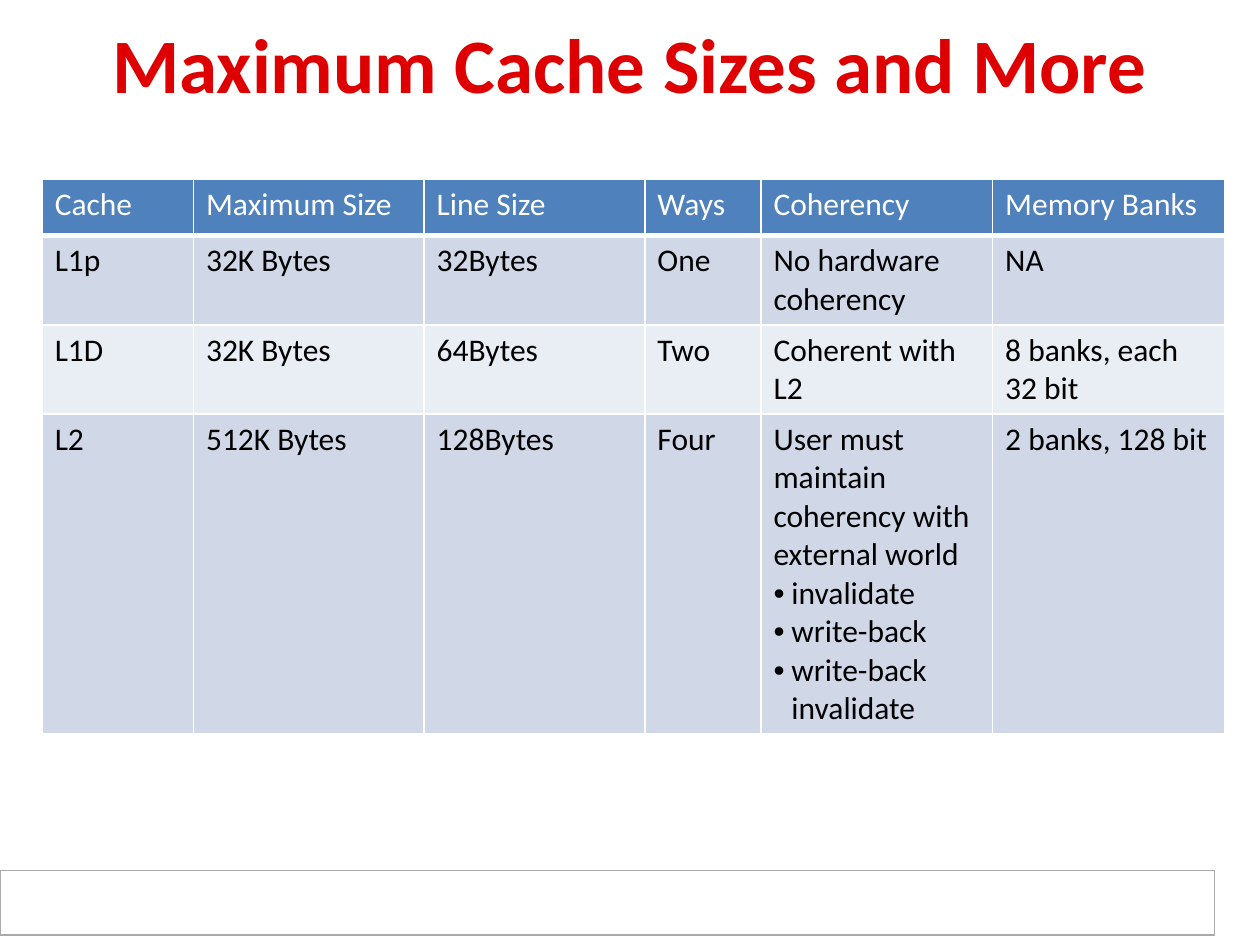
from lxml import etree
from pptx import Presentation, util as u
from pptx.dml.color import RGBColor
from pptx.enum import shapes, text
from pptx.oxml.ns import qn

HEADING = "Maximum Cache Sizes and More"
COLUMNS = [("Cache", 3.05), ("Maximum Size", 4.65), ("Line Size", 4.45),
           ("Ways", 2.34), ("Coherency", 4.67), ("Memory Banks", 4.67)]
CACHES = [
    ["L1p", "32K Bytes", "32Bytes", "One", "No hardware coherency", "NA"],
    ["L1D", "32K Bytes", "64Bytes", "Two", "Coherent with L2", "8 banks, each 32 bit"],
    ["L2", "512K Bytes", "128Bytes", "Four",
     ["User must maintain coherency with external world",
      "• invalidate", "• write-back", "• write-back\vinvalidate"],
     "2 banks, 128 bit"],
]
ROW_HEIGHTS = [1.14, 1.8, 1.8, 6.45]
COLORS = {"title": "DE0000", "header": "4F81BD", "odd": "D0D8E8", "even": "E9EDF4",
          "white": "FFFFFF", "black": "000000", "footer_line": "AAAAAA"}
BULLET_INDENT = u.Cm(0.36)


def rgb(name):
    return RGBColor.from_string(COLORS[name])


def write(frame, lines, size=18, color="black", bold=False, align=text.PP_ALIGN.LEFT):
    for i, line in enumerate([lines] if isinstance(lines, str) else lines):
        paragraph = frame.paragraphs[0] if i == 0 else frame.add_paragraph()
        paragraph.text = line.removeprefix("• ")
        if line.startswith("• "):
            props = paragraph._p.get_or_add_pPr()
            props.set("marL", str(BULLET_INDENT))
            props.set("indent", str(-BULLET_INDENT))
            etree.SubElement(props, qn("a:buFont"), typeface="Arial")
            etree.SubElement(props, qn("a:buChar"), char="•")
        paragraph.alignment = align
        for run in paragraph.runs:
            run.font.name, run.font.size, run.font.bold = "Calibri", u.Pt(size), bold
            run.font.color.rgb = rgb(color)


def add_borders(cell, bottom):
    props = cell._tc.get_or_add_tcPr()
    for side, width in (("L", 1), ("R", 1), ("T", 1), ("B", bottom)):
        line = etree.SubElement(props, qn(f"a:ln{side}"), w=str(u.Pt(width)))
        fill = etree.SubElement(line, qn("a:solidFill"))
        etree.SubElement(fill, qn("a:srgbClr"), val=COLORS["white"])


def add_footer(slide):
    footer = slide.shapes.add_shape(shapes.MSO_SHAPE.RECTANGLE,
                                    0, u.Cm(17.55), u.Cm(24.49), u.Cm(1.3))
    footer.shadow.inherit = False
    footer.fill.solid()
    footer.fill.fore_color.rgb = rgb("white")
    footer.line.color.rgb = rgb("footer_line")
    footer.line.width = u.Pt(0.75)


def add_title(slide):
    title = slide.shapes.add_textbox(u.Cm(1.27), u.Cm(0.2), u.Cm(22.86), u.Cm(2.11))
    title.text_frame.word_wrap = True
    title.text_frame.vertical_anchor = text.MSO_ANCHOR.MIDDLE
    write(title.text_frame, HEADING, size=44, color="title", bold=True,
          align=text.PP_ALIGN.CENTER)


def add_cache_table(slide):
    rows = [[name for name, _ in COLUMNS], *CACHES]
    widths = [width for _, width in COLUMNS]
    table = slide.shapes.add_table(len(rows), len(COLUMNS), u.Cm(0.85), u.Cm(3.61),
                                   u.Cm(sum(widths)), u.Cm(sum(ROW_HEIGHTS))).table
    for column, width in zip(table.columns, widths):
        column.width = u.Cm(width)
    for r, (row, height) in enumerate(zip(rows, ROW_HEIGHTS)):
        table.rows[r].height = u.Cm(height)
        band = "header" if r == 0 else "odd" if r % 2 else "even"
        for c, content in enumerate(row):
            cell = table.cell(r, c)
            add_borders(cell, bottom=3 if r == 0 else 1)
            cell.fill.solid()
            cell.fill.fore_color.rgb = rgb(band)
            write(cell.text_frame, content, color="white" if r == 0 else "black")


def main():
    deck = Presentation()
    deck.slide_width, deck.slide_height = u.Cm(25.4), u.Cm(19.05)
    slide = deck.slides.add_slide(deck.slide_layouts[6])
    add_footer(slide)
    add_title(slide)
    add_cache_table(slide)
    deck.save("out.pptx")


if __name__ == "__main__":
    main()
